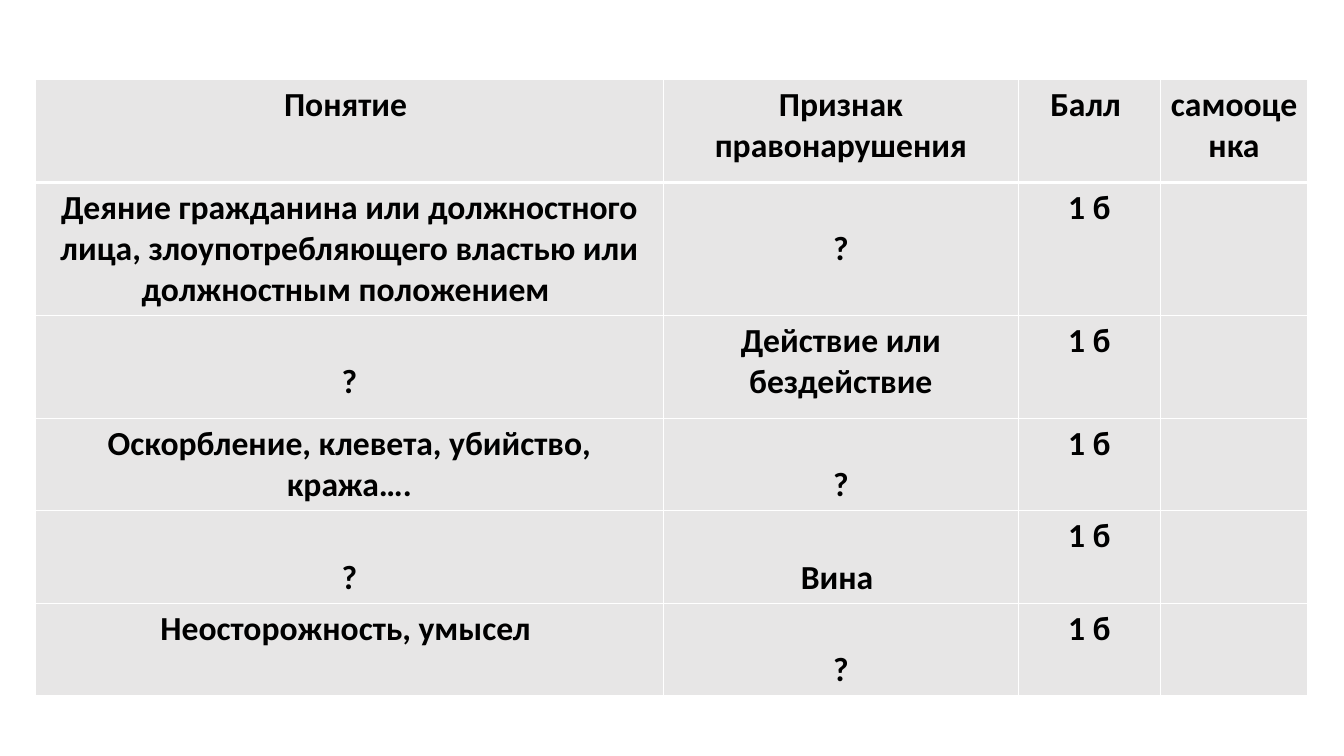
from dataclasses import dataclass

from lxml import etree
from pptx import Presentation
from pptx import util as u
from pptx.dml.color import RGBColor
from pptx.enum import text
from pptx.oxml import ns


@dataclass(frozen=True)
class Theme:
    font: str = "Calibri"
    size: int = 24
    ink: str = "000000"
    cell: str = "E7E6E6"
    border: str = "FFFFFF"
    thin: int = 1
    thick: int = 3
    margin: float = 0.05
    line_height: float = 0.41


THEME = Theme()
COLUMN_WIDTHS = [6.23, 3.52, 1.41, 1.46]
ROW_HEIGHTS = [1.02, 1.32, 1.02, 0.91, 0.91, 0.91]
HEADER = ["Понятие ", "Признак правонарушения", "Балл ", "самооценка"]
SCORE = "1 б"
CONCEPTS = [
    ("Деяние гражданина или должностного лица, злоупотребляющего властью "
     "или должностным положением ", "?"),
    ("?", "Действие или бездействие"),
    ("Оскорбление, клевета, убийство, кража….", "?"),
    ("?", "Вина "),
    ("Неосторожность, умысел ", "?"),
]
SECOND_LINE = {"?", "Вина "}


def set_borders(cell, top, bottom):
    properties = cell._tc.get_or_add_tcPr()
    widths = {"lnL": THEME.thin, "lnR": THEME.thin, "lnT": top, "lnB": bottom}
    for index, (tag, width) in enumerate(widths.items()):
        line = etree.Element(ns.qn(f"a:{tag}"), w=str(u.Pt(width)))
        fill = etree.SubElement(line, ns.qn("a:solidFill"))
        etree.SubElement(fill, ns.qn("a:srgbClr"), val=THEME.border)
        properties.insert(index, line)


def write_cell(cell, wording):
    cell.fill.solid()
    cell.fill.fore_color.rgb = RGBColor.from_string(THEME.cell)
    if not wording:
        return
    drop = THEME.line_height if wording in SECOND_LINE else 0
    cell.margin_top = u.Inches(THEME.margin + drop)
    paragraph = cell.text_frame.paragraphs[0]
    paragraph.alignment = text.PP_ALIGN.CENTER
    run = paragraph.add_run()
    run.text = wording
    run.font.name = THEME.font
    run.font.size = u.Pt(THEME.size)
    run.font.bold = True
    run.font.color.rgb = RGBColor.from_string(THEME.ink)


def add_concept_table(slide, rows):
    frame = slide.shapes.add_table(
        len(rows), len(COLUMN_WIDTHS), u.Inches(0.35), u.Inches(0.79),
        u.Inches(sum(COLUMN_WIDTHS)), u.Inches(sum(ROW_HEIGHTS)))
    table = frame.table
    for column, width in zip(table.columns, COLUMN_WIDTHS):
        column.width = u.Inches(width)
    for index, (row, height, wordings) in enumerate(zip(table.rows, ROW_HEIGHTS, rows)):
        row.height = u.Inches(height)
        top = THEME.thick if index == 1 else THEME.thin
        bottom = THEME.thick if index == 0 else THEME.thin
        for cell, wording in zip(row.cells, wordings):
            write_cell(cell, wording)
            set_borders(cell, top, bottom)


def main():
    presentation = Presentation()
    presentation.slide_width = u.Inches(13.33)
    presentation.slide_height = u.Inches(7.5)
    slide = presentation.slides.add_slide(presentation.slide_layouts[6])
    rows = [HEADER] + [[concept, sign, SCORE, ""] for concept, sign in CONCEPTS]
    add_concept_table(slide, rows)
    presentation.save("out.pptx")


if __name__ == "__main__":
    main()
